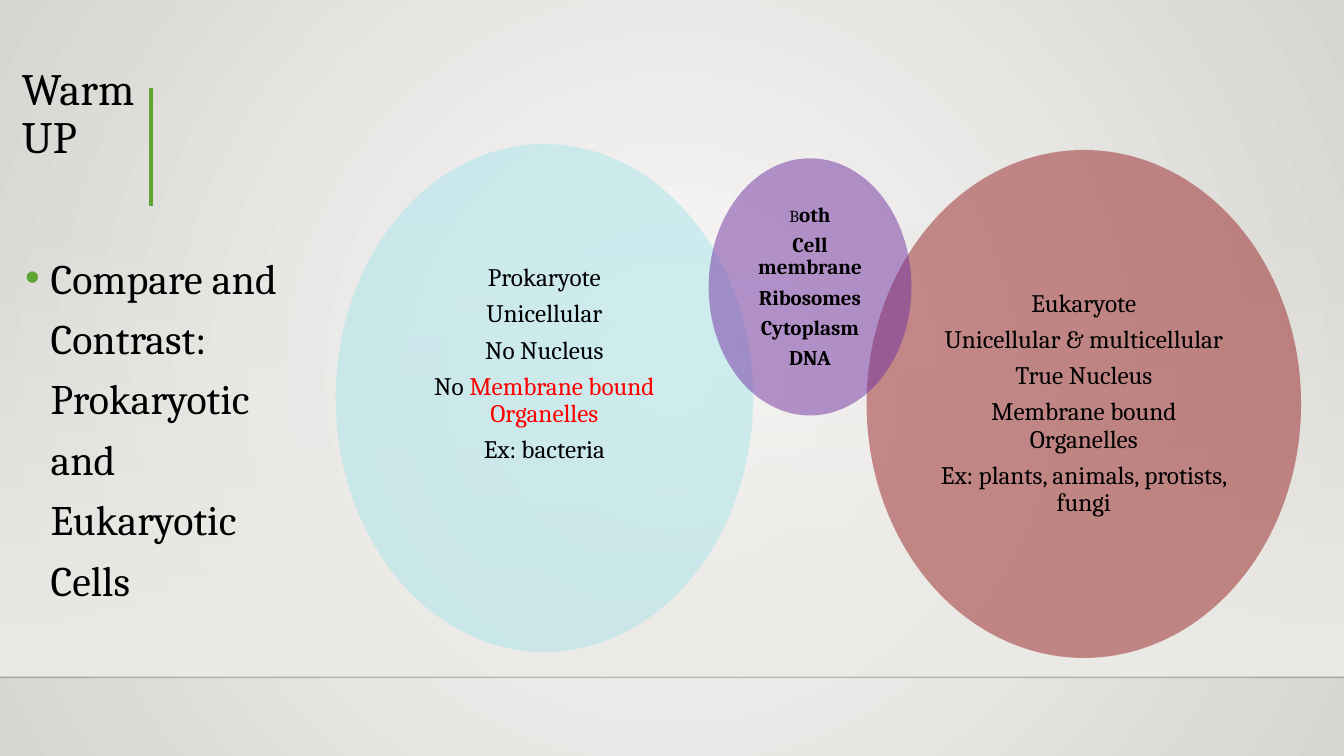
from lxml.etree import SubElement
from pptx import Presentation
from pptx.dml.color import RGBColor
from pptx.enum.shapes import MSO_CONNECTOR as Connector, MSO_SHAPE as Shape
from pptx.enum.text import MSO_ANCHOR as Anchor, MSO_AUTO_SIZE as AutoSize, PP_ALIGN as Align
from pptx.oxml import parse_xml
from pptx.oxml.ns import nsdecls, qn
from pptx.util import Cm, Pt

BLACK = RGBColor(0x00, 0x00, 0x00)
RED = RGBColor(0xFF, 0x00, 0x00)
GREEN = RGBColor(0x5F, 0xA5, 0x34)
AQUA = RGBColor(0xA9, 0xE4, 0xEB)
MAROON = RGBColor(0x97, 0x23, 0x23)
PURPLE = RGBColor(0x70, 0x30, 0xA0)
CENTER_LIGHT = RGBColor(0xFA, 0xFA, 0xF9)
EDGE_GRAY = RGBColor(0xD7, 0xD5, 0xD2)
WALL = RGBColor(0xED, 0xEB, 0xE7)

DOWNWARD = '<a:lin ang="5400000" scaled="0"/>'
CIRCULAR = ('<a:path path="circle"><a:fillToRect l="50000" t="50000" '
            'r="50000" b="50000"/></a:path>')


class VennSlide:
    font_name = "Cambria"

    def __init__(self, presentation):
        self.slide = presentation.slides.add_slide(presentation.slide_layouts[1])
        self.shapes = self.slide.shapes

    def set_font(self, font, size, color=BLACK, bold=False):
        font.name = self.font_name
        font.size = Pt(size)
        font.bold = bold
        font.color.rgb = color

    def set_alpha(self, shape, percent):
        color = shape.element.spPr.find(".//" + qn("a:srgbClr"))
        SubElement(color, qn("a:alpha"), val=str(percent * 1000))

    def set_gradient(self, parent, start, end, direction, start_alpha=100):
        gradient = parse_xml(
            f'<a:gradFill {nsdecls("a")} rotWithShape="1"><a:gsLst>'
            f'<a:gs pos="0"><a:srgbClr val="{start}">'
            f'<a:alpha val="{start_alpha * 1000}"/></a:srgbClr></a:gs>'
            f'<a:gs pos="100000"><a:srgbClr val="{end}"/></a:gs>'
            f'</a:gsLst>{direction}</a:gradFill>')
        parent.replace(parent.find(qn("a:solidFill")), gradient)

    def background(self):
        fill = self.slide.background.fill
        fill.solid()
        fill.fore_color.rgb = EDGE_GRAY
        properties = self.slide.element.find(".//" + qn("p:bgPr"))
        self.set_gradient(properties, CENTER_LIGHT, EDGE_GRAY, CIRCULAR)

    def plain_shape(self, kind, box, color):
        shape = self.shapes.add_shape(kind, *map(Cm, box))
        shape.shadow.inherit = False
        shape.fill.solid()
        shape.fill.fore_color.rgb = color
        shape.line.fill.background()
        return shape

    def wall(self, box):
        shape = self.plain_shape(Shape.RECTANGLE, box, WALL)
        self.set_gradient(shape.element.spPr, WALL, WALL, DOWNWARD, start_alpha=0)
        self.shapes.element.insert(2, shape.element)

    def line(self, ends, color, width, alpha=100):
        connector = self.shapes.add_connector(Connector.STRAIGHT, *map(Cm, ends))
        connector.line.color.rgb = color
        connector.line.width = Pt(width)
        self.set_alpha(connector, alpha)
        SubElement(connector.element.spPr, qn("a:effectLst"))

    def placeholder(self, shape, box, text, size, spacing, anchor):
        shape.left, shape.top, shape.width, shape.height = map(Cm, box)
        frame = shape.text_frame
        frame.word_wrap = True
        frame.auto_size = AutoSize.NONE
        frame.vertical_anchor = anchor
        paragraph = frame.paragraphs[0]
        paragraph.text = text
        paragraph.alignment = Align.LEFT
        paragraph.line_spacing = spacing
        paragraph.space_before = Pt(0)
        return paragraph

    def title(self, box, text, size):
        paragraph = self.placeholder(self.shapes.title, box, text, size, 0.9, Anchor.BOTTOM)
        self.set_font(paragraph.font, size)

    def bullet(self, box, text, size):
        body = self.slide.placeholders[1]
        paragraph = self.placeholder(body, box, text, size, 1.2, Anchor.TOP)
        properties = paragraph._p.get_or_add_pPr()
        properties.set("marL", str(Cm(0.64)))
        properties.set("indent", str(-Cm(0.64)))
        bullet_color = SubElement(properties, qn("a:buClr"))
        SubElement(bullet_color, qn("a:srgbClr"), val=str(GREEN))
        SubElement(properties, qn("a:buFont"), typeface="Arial")
        SubElement(properties, qn("a:buChar"), char="•")
        self.set_font(paragraph.font, size)

    def circle(self, box, color, size, facts, bold=False, inset=0.18, bottom_inset=None):
        shape = self.plain_shape(Shape.OVAL, box, color)
        self.set_alpha(shape, 50)
        frame = shape.text_frame
        frame.word_wrap = True
        frame.vertical_anchor = Anchor.MIDDLE
        frame.margin_left = frame.margin_right = frame.margin_top = Cm(inset)
        frame.margin_bottom = Cm(bottom_inset or inset)
        for index, fact in enumerate(facts):
            paragraph = frame.paragraphs[0] if index == 0 else frame.add_paragraph()
            paragraph.alignment = Align.CENTER
            paragraph.line_spacing = 0.9
            paragraph.space_after = Pt(size * 0.35)
            runs = [(fact, {})] if isinstance(fact, str) else fact
            for text, style in runs:
                run = paragraph.add_run()
                run.text = text
                self.set_font(run.font, **{"size": size, "bold": bold, **style})


def main():
    presentation = Presentation()
    presentation.slide_width = Cm(33.87)
    presentation.slide_height = Cm(19.05)

    venn = VennSlide(presentation)
    venn.background()
    venn.wall((0, 5.59, 33.87, 11.43))
    venn.line((0, 17.07, 33.87, 17.07), BLACK, 1, alpha=20)
    venn.line((3.81, 2.21, 3.81, 5.18), GREEN, 3)
    venn.title((0.3, 1.3, 3.71, 2.95), "Warm UP", 32)
    venn.bullet((0.38, 5.97, 7.62, 9.55),
                "Compare and Contrast: Prokaryotic and Eukaryotic Cells", 30)

    venn.circle((8.46, 3.63, 10.52, 12.8), AQUA, 18, [
        "Prokaryote",
        "Unicellular",
        "No Nucleus",
        [("No ", {}), ("Membrane bound Organelles", {"color": RED})],
        "Ex: bacteria",
    ], bottom_inset=1.87)
    venn.circle((21.84, 3.78, 10.95, 12.8), MAROON, 18, [
        "Eukaryote",
        "Unicellular & multicellular",
        "True Nucleus",
        "Membrane bound Organelles",
        "Ex: plants, animals, protists, fungi",
    ])
    venn.circle((17.86, 3.99, 5.11, 6.48), PURPLE, 15, [
        [("B", {"size": 12, "bold": False}), ("oth", {})],
        "Cell membrane",
        "Ribosomes",
        "Cytoplasm",
        "DNA",
    ], bold=True, inset=0.13)

    presentation.save("out.pptx")


if __name__ == "__main__":
    main()
